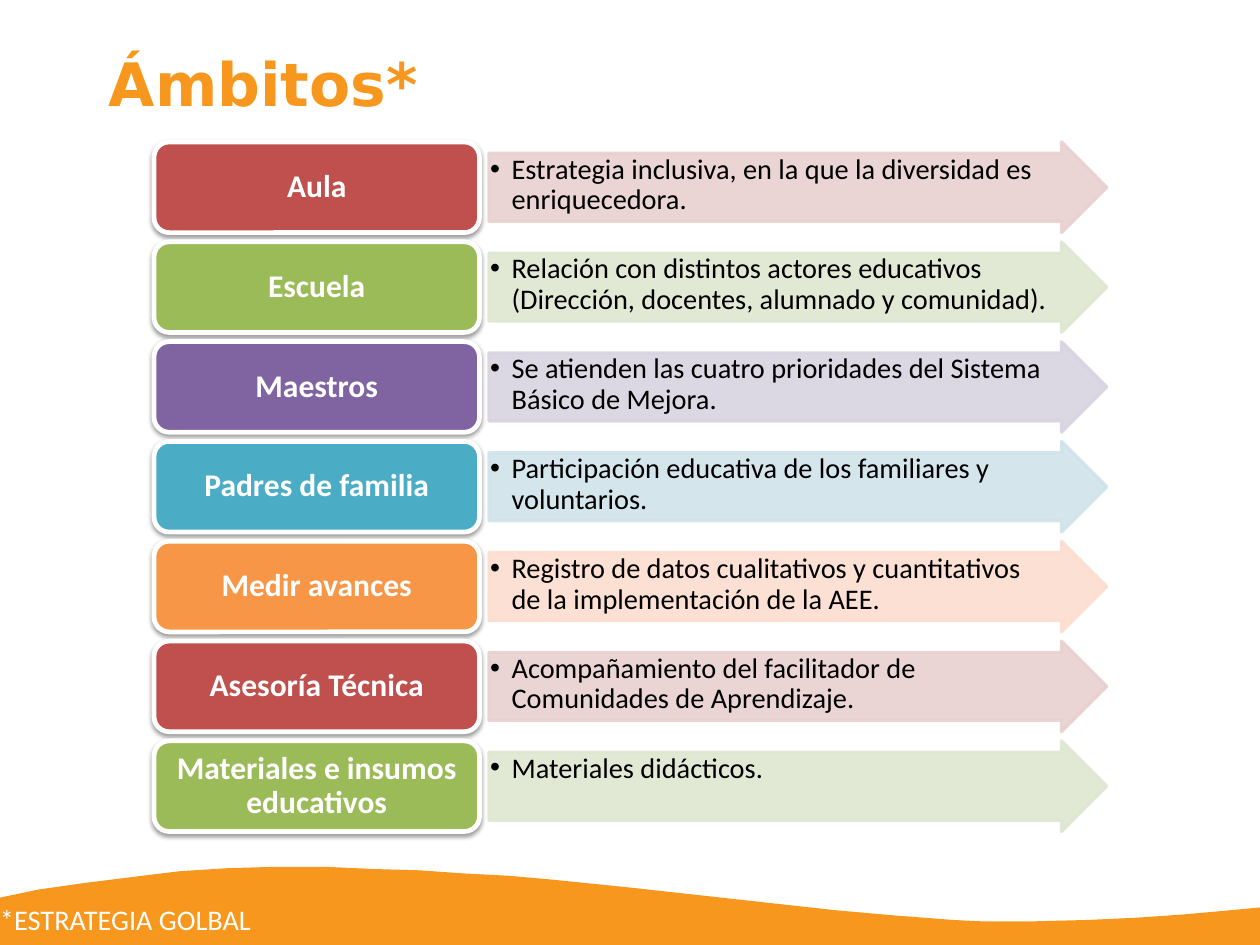
from dataclasses import dataclass

import pptx
import pptx.dml.color
import pptx.enum.shapes
import pptx.enum.text
import pptx.oxml
import pptx.oxml.ns
import pptx.util
from lxml import etree

Cm = pptx.util.Cm
Pt = pptx.util.Pt
MSO_SHAPE = pptx.enum.shapes.MSO_SHAPE
ANCHOR = pptx.enum.text.MSO_ANCHOR
ALIGN = pptx.enum.text.PP_ALIGN
qn = pptx.oxml.ns.qn


@dataclass(frozen=True)
class Theme:
    orange: str = "F8971D"
    white: str = "FFFFFF"
    black: str = "000000"
    # (label fill, arrow fill), taken in turn by the rows
    pairs: tuple = (
        ("C0504D", "E8D0D0"),
        ("9BBB59", "DEE7D1"),
        ("8064A2", "D8D3E0"),
        ("4BACC6", "D0E3EA"),
        ("F79646", "FCDDCF"),
    )
    title_font: str = "DejaVu Sans"
    text_font: str = "Calibri"
    title_size: int = 38
    label_size: int = 20
    text_size: int = 18


THEME = Theme()

SCOPES = [
    ("Aula", "Estrategia inclusiva, en la que la diversidad es enriquecedora."),
    ("Escuela", "Relación con distintos actores educativos "
                "(Dirección, docentes, alumnado y comunidad)."),
    ("Maestros", "Se atienden las cuatro prioridades del Sistema Básico de Mejora."),
    ("Padres de familia", "Participación educativa de los familiares y voluntarios."),
    ("Medir avances", "Registro de datos cualitativos y cuantitativos de "
                      "la implementación de la AEE."),
    ("Asesoría Técnica", "Acompañamiento del facilitador de Comunidades de Aprendizaje."),
    ("Materiales e insumos educativos", "Materiales didácticos."),
]

# Upper edge of the wave in cm, from the top left corner of its box
WAVE_CREST = [
    (0, 0.69), (0.86, 0.51), (1.91, 0.36), (2.95, 0.23), (4.01, 0.1),
    (5.11, 0.03), (6.2, 0), (7.29, 0), (8.38, 0.05), (9.4, 0.08),
    (10.41, 0.15), (11.38, 0.2), (12.29, 0.28), (14.07, 0.46), (18.69, 0.97),
    (20.04, 1.09), (20.7, 1.14), (21.34, 1.19), (21.97, 1.22), (23.19, 1.22),
    (24.36, 1.19), (25.45, 1.14), (26.47, 1.07), (27.38, 0.99), (28.22, 0.91),
]


def rgb(color):
    return pptx.dml.color.RGBColor.from_string(color)


def set_insets(frame, left=0, top=0, right=0, bottom=0):
    frame.margin_left, frame.margin_top = Cm(left), Cm(top)
    frame.margin_right, frame.margin_bottom = Cm(right), Cm(bottom)


def write(shape, text, font, size, color, bold=False, align=ALIGN.LEFT, anchor=ANCHOR.TOP):
    frame = shape.text_frame
    frame.word_wrap = True
    frame.vertical_anchor = anchor
    paragraph = frame.paragraphs[0]
    paragraph.text = text
    paragraph.alignment = align
    paragraph.font.name = font
    paragraph.font.size = Pt(size)
    paragraph.font.bold = bold
    paragraph.font.color.rgb = rgb(color)
    return paragraph


def paint(shape, fill, line=None, line_width=0):
    shape.shadow.inherit = False
    shape.fill.solid()
    shape.fill.fore_color.rgb = rgb(fill)
    if line:
        shape.line.color.rgb = rgb(line)
        shape.line.width = Pt(line_width)
    else:
        shape.line.fill.background()


def make_translucent(shape, percent):
    """Apply the same opacity to fill and line."""
    for color in shape._element.spPr.iter(qn("a:srgbClr")):
        etree.SubElement(color, qn("a:alpha"), val=str(percent * 1000))


def add_soft_shadow(shape):
    effects = shape._element.spPr.find(qn("a:effectLst"))
    shadow = etree.SubElement(effects, qn("a:outerShdw"), blurRad=str(Pt(3.1)),
                              dist=str(Pt(1.6)), dir="5400000", rotWithShape="0")
    color = etree.SubElement(shadow, qn("a:srgbClr"), val=THEME.black)
    etree.SubElement(color, qn("a:alpha"), val="38000")


def add_bullet(paragraph, indent):
    properties = paragraph._p.get_or_add_pPr()
    properties.set("marL", str(Cm(indent)))
    properties.set("indent", str(-Cm(indent)))
    etree.SubElement(properties, qn("a:buFont"), typeface="Arial")
    etree.SubElement(properties, qn("a:buChar"), char="•")


def add_title(slide, left, top, width, height):
    title = slide.shapes.title
    title.left, title.top, title.width, title.height = map(Cm, (left, top, width, height))
    set_insets(title.text_frame)
    heading = write(title, "Ámbitos*", THEME.title_font, THEME.title_size, THEME.orange, bold=True)
    heading.line_spacing = Pt(44.1)


def add_scope(slide, label, detail, colors, left, top, width, height):
    """One row: a rounded label and an arrow holding its description."""
    label_width, gap = 7.29, 0.21
    label_fill, arrow_fill = colors
    arrow_left = label_width + gap

    arrow = slide.shapes.add_shape(
        MSO_SHAPE.RIGHT_ARROW, Cm(left + arrow_left), Cm(top), Cm(width - arrow_left), Cm(height))
    arrow.adjustments[0], arrow.adjustments[1] = 0.75, 0.5
    paint(arrow, arrow_fill, arrow_fill, 2)
    make_translucent(arrow, 90)
    set_insets(arrow.text_frame, 0.03, 0.03, 0.53, 0.03)
    add_bullet(arrow.text_frame.paragraphs[0], 0.48)
    description = write(arrow, detail, THEME.text_font, THEME.text_size, THEME.black)
    description.line_spacing = 0.9

    tile = slide.shapes.add_shape(
        MSO_SHAPE.ROUNDED_RECTANGLE, Cm(left), Cm(top), Cm(label_width), Cm(height))
    paint(tile, label_fill, THEME.white, 3)
    add_soft_shadow(tile)
    set_insets(tile.text_frame, 0.2, 0.1, 0.2, 0.1)
    name = write(tile, label, THEME.text_font, THEME.label_size, THEME.white,
                 bold=True, align=ALIGN.CENTER, anchor=ANCHOR.MIDDLE)
    name.line_spacing = 0.9


def add_scopes(slide, left, top, width, height):
    row_height = 2.03
    pitch = (height - row_height) / (len(SCOPES) - 1)
    for row, (label, detail) in enumerate(SCOPES):
        colors = THEME.pairs[row % len(THEME.pairs)]
        add_scope(slide, label, detail, colors, left, top + row * pitch, width, row_height)


def add_wave_footer(slide, left, top, width, height):
    outline = WAVE_CREST + [(width, height), (0, height)]
    points = [(Cm(left + x), Cm(top + y)) for x, y in outline]
    builder = slide.shapes.build_freeform(*points[0])
    builder.add_line_segments(points[1:])
    wave = builder.convert_to_shape()
    paint(wave, THEME.orange)
    set_insets(wave.text_frame, bottom=0.2)
    write(wave, "*ESTRATEGIA GOLBAL", THEME.text_font, THEME.text_size, THEME.white,
          anchor=ANCHOR.BOTTOM)


def main():
    presentation = pptx.Presentation()
    presentation.slide_width, presentation.slide_height = Cm(28.22), Cm(21.16)
    slide = presentation.slides.add_slide(presentation.slide_layouts[5])
    add_wave_footer(slide, 0, 19.41, 28.22, 1.75)
    add_scopes(slide, 3.45, 3.18, 21.34, 15.44)
    add_title(slide, 2.44, 1.09, 23.37, 2.24)
    presentation.save("out.pptx")


if __name__ == "__main__":
    main()
